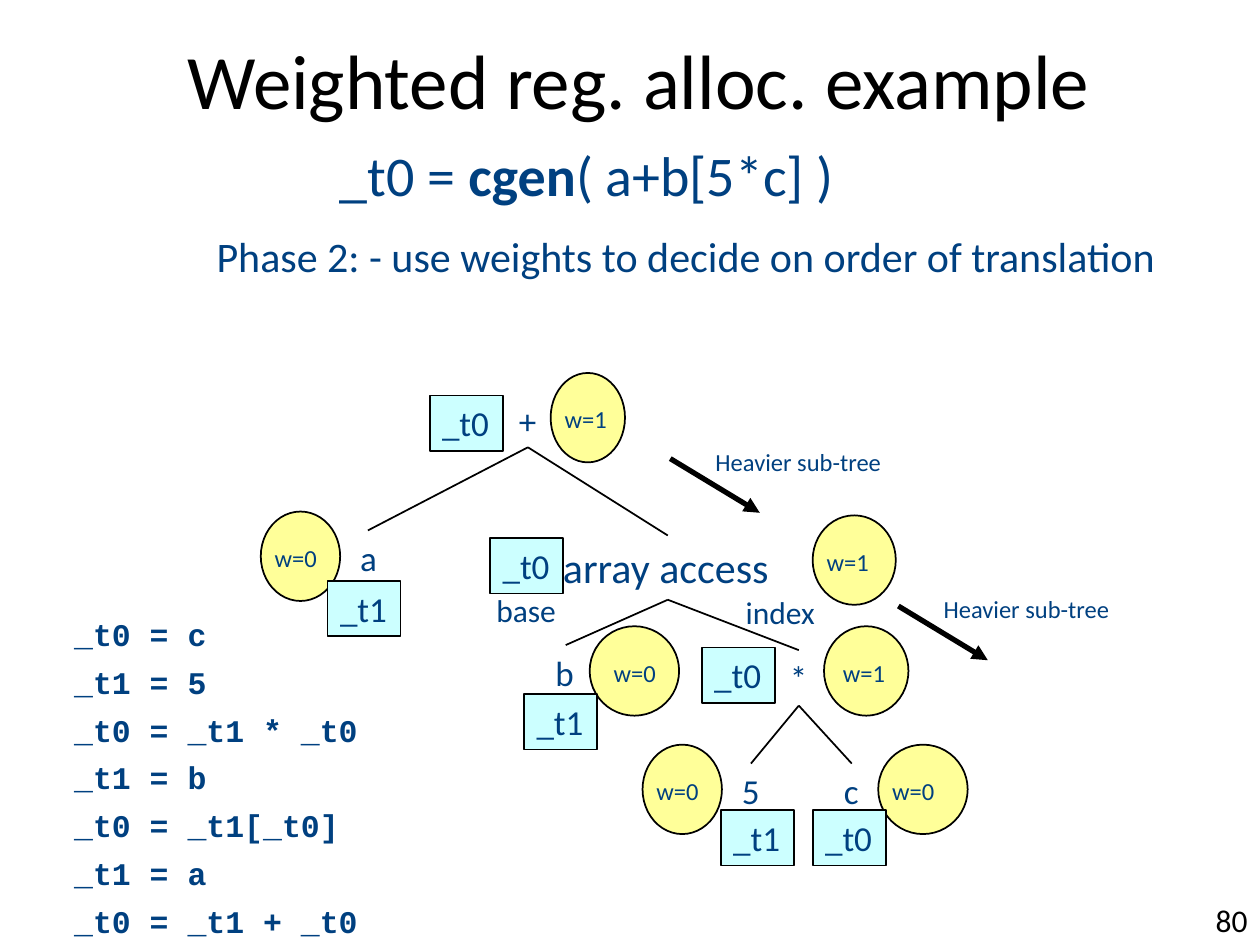
from pptx import Presentation, util as u
from pptx.dml.color import RGBColor
from pptx.enum import shapes, text
from pptx.oxml.ns import qn
from lxml import etree

NAVY = RGBColor(0x00, 0x40, 0x80)
BLACK = RGBColor(0, 0, 0)
YELLOW = RGBColor(0xFF, 0xFF, 0x99)
CYAN = RGBColor(0xCC, 0xFF, 0xFF)
CELL = u.Inches(0.1)  # the slide is 100 columns by 75 rows
CIRCLE_H = 7.1
LEFT, CENTER, RIGHT = text.PP_ALIGN.LEFT, text.PP_ALIGN.CENTER, text.PP_ALIGN.RIGHT


def grid(*cells):
    return [round(c * CELL) for c in cells]


def write(sp, content, size, color=NAVY, font="Calibri", bold=False, align=LEFT,
          wrap=False, anchor=text.MSO_ANCHOR.TOP):
    """Fill a shape with one paragraph; content is a string or (string, bold) runs."""
    tf = sp.text_frame
    tf.word_wrap = wrap
    tf.vertical_anchor = anchor
    if not wrap:
        tf.auto_size = text.MSO_AUTO_SIZE.SHAPE_TO_FIT_TEXT
    p = tf.paragraphs[0]
    p.alignment = align
    p.font.size, p.font.name = u.Pt(size), font
    p.font.color.rgb = color
    runs = [(content, bold)] if isinstance(content, str) else content
    for words, is_bold in runs:
        r = p.add_run()
        r.text = words
        r.font.bold = is_bold
    return tf


def label(s, content, x, y, w, h, size=20, **style):
    return write(s.shapes.add_textbox(*grid(x, y, w, h)), content, size, **style)


def outlined(s, kind, fill, x, y, w, h):
    sp = s.shapes.add_shape(kind, *grid(x, y, w, h))
    sp.shadow.inherit = False
    sp.fill.solid()
    sp.fill.fore_color.rgb = fill
    sp.line.color.rgb = BLACK
    sp.line.width = u.Pt(1)
    return sp


def weight(s, value, x, y, w, indent=1.9):
    """Yellow ellipse with its weight; indent is the label's left inset."""
    outlined(s, shapes.MSO_SHAPE.OVAL, YELLOW, x, y, w, CIRCLE_H)
    tf = label(s, f"w={value}", x - 0.8, y + 2, w + 4, 3, 14, wrap=True)
    tf.margin_left = grid(indent)[0]


def register(s, name, x, y):
    write(outlined(s, shapes.MSO_SHAPE.RECTANGLE, CYAN, x, y, 5.8, 4.4), name, 20)


def line(s, start, end, width=1, arrow=False):
    c = s.shapes.add_connector(shapes.MSO_CONNECTOR.STRAIGHT, *grid(*start, *end))
    c.line.color.rgb = BLACK
    c.line.width = u.Pt(width)
    if arrow:
        etree.SubElement(c.line._get_or_add_ln(), qn("a:tailEnd"), type="triangle")
    etree.SubElement(c._element.spPr, qn("a:effectLst"))


def heavier(s, x, y):
    """Arrow towards the heavier sub-tree, with its caption."""
    line(s, (x, y), (x + 7.1, y + 4.3), 3, arrow=True)
    label(s, "Heavier sub-tree", x + 2.6, y - 1.45, 15.3, 3.4, 14)


def headings(s):
    label(s, "Weighted reg. alloc. example", 8.2, 0, 85, 12.5, 44, color=BLACK,
          align=CENTER, wrap=True, anchor=text.MSO_ANCHOR.MIDDLE)
    label(s, [("_t0 = ", False), ("cgen", True), ("( a+b[5*c] )", False)],
          26, 10.7, 41.7, 6.4, 32)
    label(s, "Phase 2: - use weights to decide on order of translation",
          16.2, 17.8, 77.5, 5, 24)
    label(s, "80", 94.9, 71, 5.1, 4, 18, color=BLACK, align=RIGHT, wrap=True)


def tree(s):
    for name, x, y in [("+", 40.2, 31.2), ("a", 27.6, 42.1), ("b", 43.1, 51.2),
                       ("*", 61.7, 51.6), ("5", 57.9, 60.6), ("c", 66, 60.6)]:
        label(s, name, x, y, 3.4, 4.4)
    label(s, "array access", 43.7, 42.5, 18.6, 5, 24)
    label(s, "base", 38.4, 46.4, 6.8, 4, 18)
    label(s, "index", 58.2, 46.6, 7.6, 4, 18)

    branches = {(41.9, 35.5): [(29.2, 42.1), (53, 42.5)],
                (53, 47.6): [(44.9, 51.2), (63.4, 51.6)],
                (63.4, 56): [(59.6, 60.6), (67.6, 60.6)]}
    for parent, children in branches.items():
        for child in children:
            line(s, child, parent)

    weight(s, 0, 20.7, 40.6, 6.3)
    weight(s, 0, 51, 59.1, 6.3)
    weight(s, 0, 69.7, 59.1, 7.1)
    weight(s, 1, 65.4, 49.7, 6.7, indent=2.3)
    weight(s, 0, 46.8, 49.7, 7.1, indent=2.7)
    weight(s, 1, 64.5, 40.9, 6.6)
    weight(s, 1, 43.7, 29.6, 5.9)

    for name, x, y in [("_t0", 55.7, 51.4), ("_t0", 38.9, 42.7), ("_t0", 34.1, 31.4),
                       ("_t0", 64.5, 64.3), ("_t1", 57.2, 64.3), ("_t1", 41.6, 55.1),
                       ("_t1", 26, 46.1)]:
        register(s, name, x, y)
    heavier(s, 53.2, 36.4)
    heavier(s, 71.3, 48.1)


def code(s):
    lines = ["_t0 = c", "_t1 = 5", "_t0 = _t1 * _t0", "_t1 = b",
             "_t0 = _t1[_t0]", "_t1 = a", "_t0 = _t1 + _t0"]
    for i, statement in enumerate(lines):
        label(s, statement, 4.9, 48.3 + 3.8 * i, 32.3, 4, 18,
              font="Courier New", bold=True, wrap=True)


def main():
    prs = Presentation()
    prs.slide_width, prs.slide_height = grid(100, 75)
    s = prs.slides.add_slide(prs.slide_layouts[6])
    headings(s)
    tree(s)
    code(s)
    prs.save("out.pptx")


if __name__ == "__main__":
    main()
